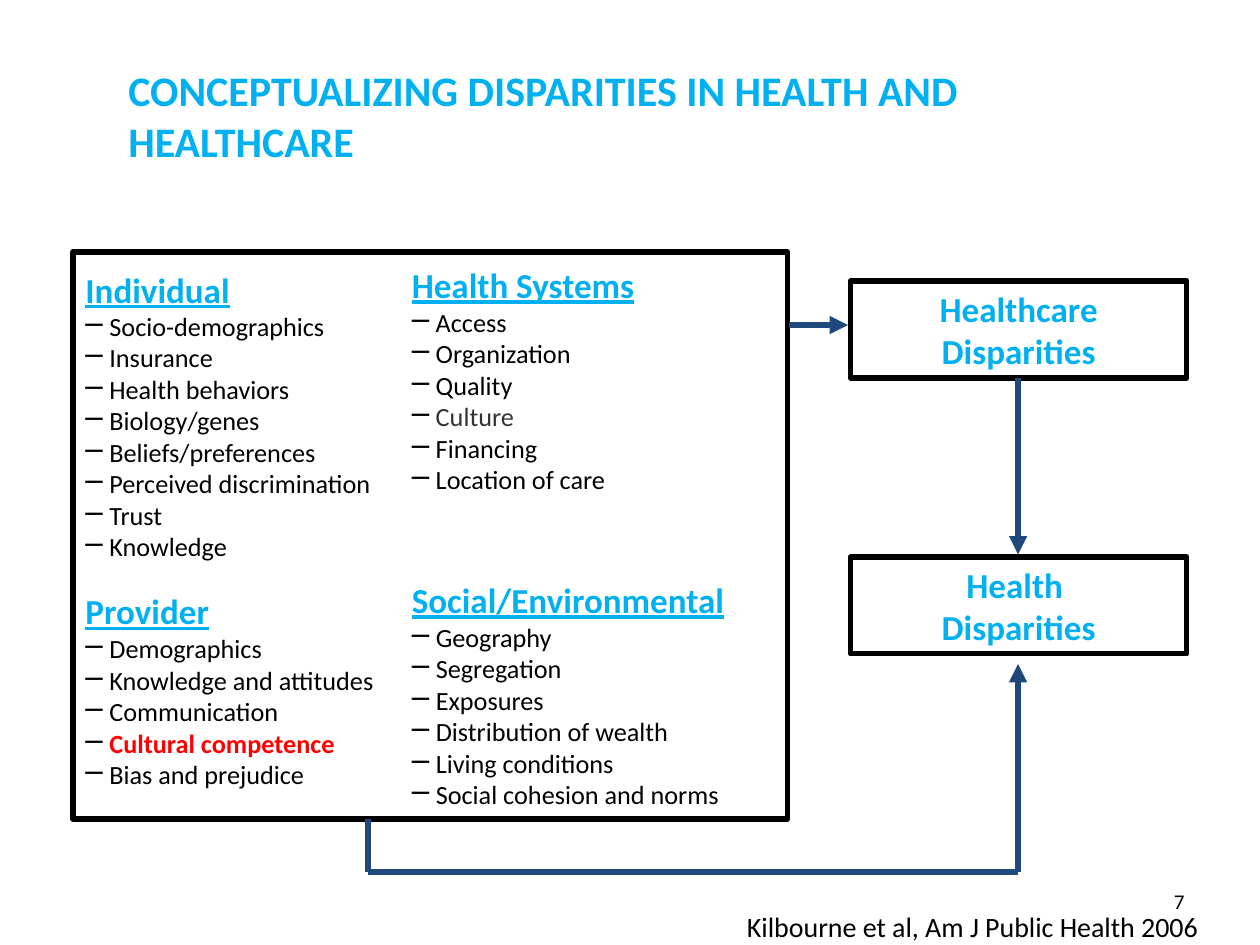
from dataclasses import dataclass

from lxml import etree
from pptx import Presentation
from pptx.dml.color import RGBColor
from pptx.enum.shapes import MSO_CONNECTOR, MSO_SHAPE
from pptx.enum.text import MSO_ANCHOR, PP_ALIGN
from pptx.oxml.ns import qn
from pptx.util import Inches, Pt

STRAIGHT = MSO_CONNECTOR.STRAIGHT
RECTANGLE = MSO_SHAPE.RECTANGLE
TOP, MIDDLE = MSO_ANCHOR.TOP, MSO_ANCHOR.MIDDLE
LEFT, CENTER, RIGHT = PP_ALIGN.LEFT, PP_ALIGN.CENTER, PP_ALIGN.RIGHT


@dataclass(frozen=True)
class Theme:
    font: str = "Calibri"
    accent: str = "00B0F0"
    ink: str = "000000"
    muted: str = "333333"
    alert: str = "FF0000"
    arrow: str = "1F497D"
    title_size: int = 24
    heading_size: int = 20
    item_size: int = 15
    source_size: int = 16
    number_size: int = 12
    box_line: float = 3
    arrow_line: float = 3.5


THEME = Theme()
TITLE = {"size": Pt(THEME.title_size), "bold": True}
HEADING = {"size": Pt(THEME.heading_size), "bold": True}
GROUP_HEADING = {**HEADING, "underline": True}
ITEM = {"size": Pt(THEME.item_size)}

# Items that differ from plain black text: colour and bold
SPECIAL_ITEMS = {
    "Culture": (THEME.muted, False),
    "Cultural competence": (THEME.alert, True),
}

# Heading, (left, top, width, height), heading line spacing, items
GROUPS = [
    ("Individual", (0.58, 2.08, 2.67, 2.17), 1.0,
     ["Socio-demographics", "Insurance", "Health behaviors", "Biology/genes",
      "Beliefs/preferences", "Perceived discrimination", "Trust", "Knowledge"]),
    ("Health Systems", (3.17, 2.08, 2.5, 2), 0.9,
     ["Access", "Organization", "Quality", "Culture", "Financing",
      "Location of care"]),
    ("Provider", (0.58, 4.67, 2.75, 1.75), 0.9,
     ["Demographics", "Knowledge and attitudes", "Communication",
      "Cultural competence", "Bias and prejudice"]),
    ("Social/Environmental", (3.17, 4.58, 3.08, 1.75), 0.9,
     ["Geography", "Segregation", "Exposures", "Distribution of wealth",
      "Living conditions", "Social cohesion and norms"]),
]

# Start, end, arrowhead at the end
LINES = [
    ((8.08, 3), (8.08, 4.4), True),
    ((2.92, 6.5), (2.92, 6.92), False),
    ((2.92, 6.92), (8.08, 6.92), False),
    ((8.08, 6.92), (8.08, 5.27), True),
    ((6.26, 2.58), (6.73, 2.58), True),
]


def inches(values):
    return [Inches(value) for value in values]


def add_run(paragraph, text, color, formats):
    run = paragraph.add_run()
    run.text = text
    run.font.name = THEME.font
    run.font.color.rgb = RGBColor.from_string(color)
    for name, value in formats.items():
        setattr(run.font, name, value)


def fill_text(shape, lines, color, formats, align=LEFT, anchor=TOP):
    frame = shape.text_frame
    frame.word_wrap = True
    frame.vertical_anchor = anchor
    for index, line in enumerate(lines):
        paragraph = frame.paragraphs[0] if index == 0 else frame.add_paragraph()
        paragraph.alignment = align
        add_run(paragraph, line, color, formats)


def add_text(slide, bounds, text, color, formats, align=LEFT, anchor=TOP):
    shape = slide.shapes.add_textbox(*inches(bounds))
    fill_text(shape, [text], color, formats, align, anchor)
    return shape


def hang(paragraph, bullet=False):
    """Give the paragraph a hanging indent and, if asked, a dash bullet."""
    properties = paragraph._p.get_or_add_pPr()
    properties.set("marL", str(Inches(0.19)))
    properties.set("indent", str(-Inches(0.19)))
    if bullet:
        color = etree.SubElement(properties, qn("a:buClr"))
        etree.SubElement(color, qn("a:srgbClr"), val=THEME.ink)
        etree.SubElement(properties, qn("a:buSzPct"), val="120000")
        etree.SubElement(properties, qn("a:buChar"), char="–")


def add_group(slide, heading, bounds, spacing, items):
    shape = add_text(slide, bounds, heading, THEME.accent, GROUP_HEADING)
    frame = shape.text_frame
    frame.paragraphs[0].line_spacing = spacing
    hang(frame.paragraphs[0])
    for item in items:
        paragraph = frame.add_paragraph()
        hang(paragraph, bullet=True)
        color, bold = SPECIAL_ITEMS.get(item, (THEME.ink, False))
        add_run(paragraph, item, color, {**ITEM, "bold": bold})


def add_box(slide, bounds, lines=()):
    box = slide.shapes.add_shape(RECTANGLE, *inches(bounds))
    box.shadow.inherit = False
    box.fill.background()
    box.line.color.rgb = RGBColor.from_string(THEME.ink)
    box.line.width = Pt(THEME.box_line)
    fill_text(box, lines, THEME.accent, HEADING, CENTER)


def add_line(slide, start, end, arrowhead):
    line = slide.shapes.add_connector(STRAIGHT, *inches(start + end))
    line.line.color.rgb = RGBColor.from_string(THEME.arrow)
    line.line.width = Pt(THEME.arrow_line)
    properties = line._element.spPr
    if arrowhead:
        etree.SubElement(properties.find(qn("a:ln")), qn("a:tailEnd"), type="triangle")
    etree.SubElement(properties, qn("a:effectLst"))


def main():
    presentation = Presentation()
    presentation.slide_width, presentation.slide_height = inches((10, 7.5))
    slide = presentation.slides.add_slide(presentation.slide_layouts[6])

    # Title
    add_text(slide, (0.92, 0.5, 8.5, 0.83),
             "CONCEPTUALIZING DISPARITIES IN HEALTH AND HEALTHCARE",
             THEME.accent, TITLE, anchor=MIDDLE)

    # Factors and the frame around them
    for group in GROUPS:
        add_group(slide, *group)
    add_box(slide, (0.58, 2, 5.67, 4.5))

    # Outcomes
    add_box(slide, (6.75, 2.23, 2.67, 0.77), ["Healthcare Disparities"])
    add_box(slide, (6.75, 4.42, 2.67, 0.77), ["Health ", "Disparities"])

    # Paths from factors to outcomes
    for line in LINES:
        add_line(slide, *line)

    # Source and slide number
    add_text(slide, (5.83, 7.17, 4.42, 0.37),
             "Kilbourne et al, Am J Public Health 2006",
             THEME.ink, {"size": Pt(THEME.source_size)})
    add_text(slide, (7.17, 6.95, 2.33, 0.4), "7", THEME.ink,
             {"size": Pt(THEME.number_size)}, RIGHT, MIDDLE)

    presentation.save("out.pptx")


if __name__ == "__main__":
    main()
